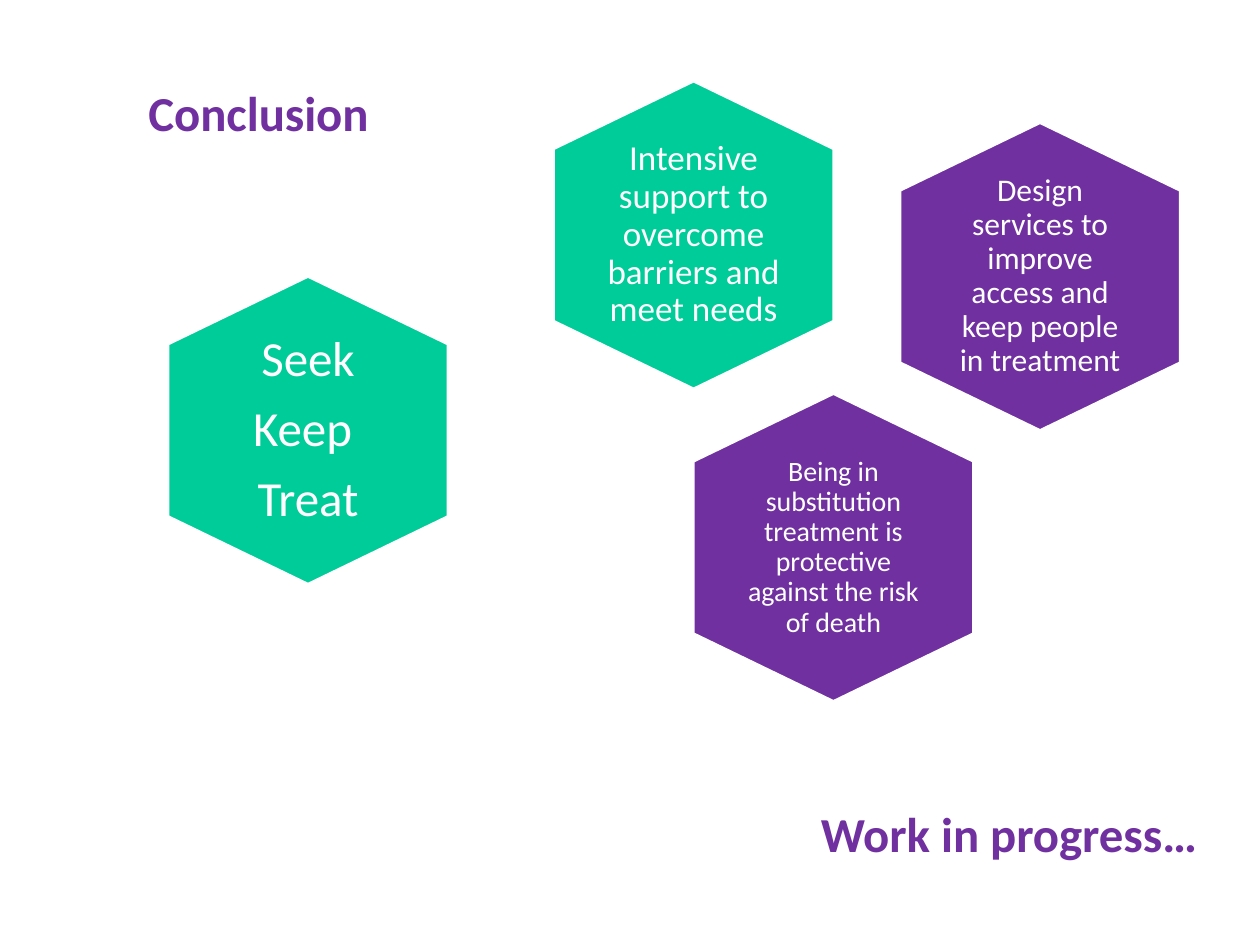
from pptx import Presentation, util as u
from pptx.dml.color import RGBColor
from pptx.enum import text

PURPLE, GREEN, WHITE = "7030A0", "00CC99", "FFFFFF"
FONT = "Calibri"
SLIDE_WIDTH, SLIDE_HEIGHT = 10, 7.5
HEXAGON_WIDTH, HEXAGON_HEIGHT = 2.23, 2.45
# Corners as shares of the hexagon's box, clockwise from the top
CORNERS = [(0.5, 0), (1, 0.22), (1, 0.78), (0.5, 1), (0, 0.78), (0, 0.22)]

# left, top, fill, text size, inset, paragraphs
HEXAGONS = [
    (7.14, 0.97, PURPLE, 18, 0.4,
     ["Design services to improve access and keep people in treatment"]),
    (4.39, 0.64, GREEN, 20, 0.34,
     ["Intensive support to overcome barriers and meet needs"]),
    (5.5, 3.12, PURPLE, 16, 0.4,
     ["Being in substitution treatment is protective against the risk of death"]),
    (1.33, 2.19, GREEN, 28, 0.34, ["Seek", "Keep ", "Treat"]),
]


def color(value):
    return RGBColor.from_string(value)


def add_run(paragraph, words, size, font_color, bold=False):
    run = paragraph.add_run()
    run.text = words
    run.font.name = FONT
    run.font.size = u.Pt(size)
    run.font.bold = bold
    run.font.color.rgb = color(font_color)


def add_heading(slide, left, top, words, alignment):
    shape = slide.shapes.add_textbox(*map(u.Inches, (left, top, 6.43, 0.55)))
    frame = shape.text_frame
    frame.word_wrap = True
    frame.vertical_anchor = text.MSO_ANCHOR.BOTTOM
    paragraph = frame.paragraphs[0]
    paragraph.alignment = alignment
    add_run(paragraph, words, 27.9, PURPLE, bold=True)


def add_hexagon(slide, left, top, fill, size, inset, lines):
    points = [(u.Inches(left + x * HEXAGON_WIDTH), u.Inches(top + y * HEXAGON_HEIGHT))
              for x, y in CORNERS]
    builder = slide.shapes.build_freeform(*points[0])
    builder.add_line_segments(points[1:], close=True)
    shape = builder.convert_to_shape()
    shape.shadow.inherit = False
    shape.fill.solid()
    shape.fill.fore_color.rgb = color(fill)
    shape.line.color.rgb = color(WHITE)
    shape.line.width = u.Pt(2)

    frame = shape.text_frame
    frame.word_wrap = True
    frame.vertical_anchor = text.MSO_ANCHOR.MIDDLE
    frame.margin_left = frame.margin_right = u.Inches(inset)
    frame.margin_top = frame.margin_bottom = u.Inches(inset + 0.05)
    for index, line in enumerate(lines):
        paragraph = frame.add_paragraph() if index else frame.paragraphs[0]
        paragraph.alignment = text.PP_ALIGN.CENTER
        paragraph.line_spacing = 0.9
        paragraph.space_after = u.Pt(0.35 * size)
        add_run(paragraph, line, size, WHITE)


def main():
    presentation = Presentation()
    presentation.slide_width = u.Inches(SLIDE_WIDTH)
    presentation.slide_height = u.Inches(SLIDE_HEIGHT)
    slide = presentation.slides.add_slide(presentation.slide_layouts[6])
    add_heading(slide, 1.08, 0.62, "Conclusion", text.PP_ALIGN.LEFT)
    for hexagon in HEXAGONS:
        add_hexagon(slide, *hexagon)
    add_heading(slide, 3.17, 6.34, "Work in progress…", text.PP_ALIGN.RIGHT)
    presentation.save("out.pptx")


if __name__ == "__main__":
    main()
